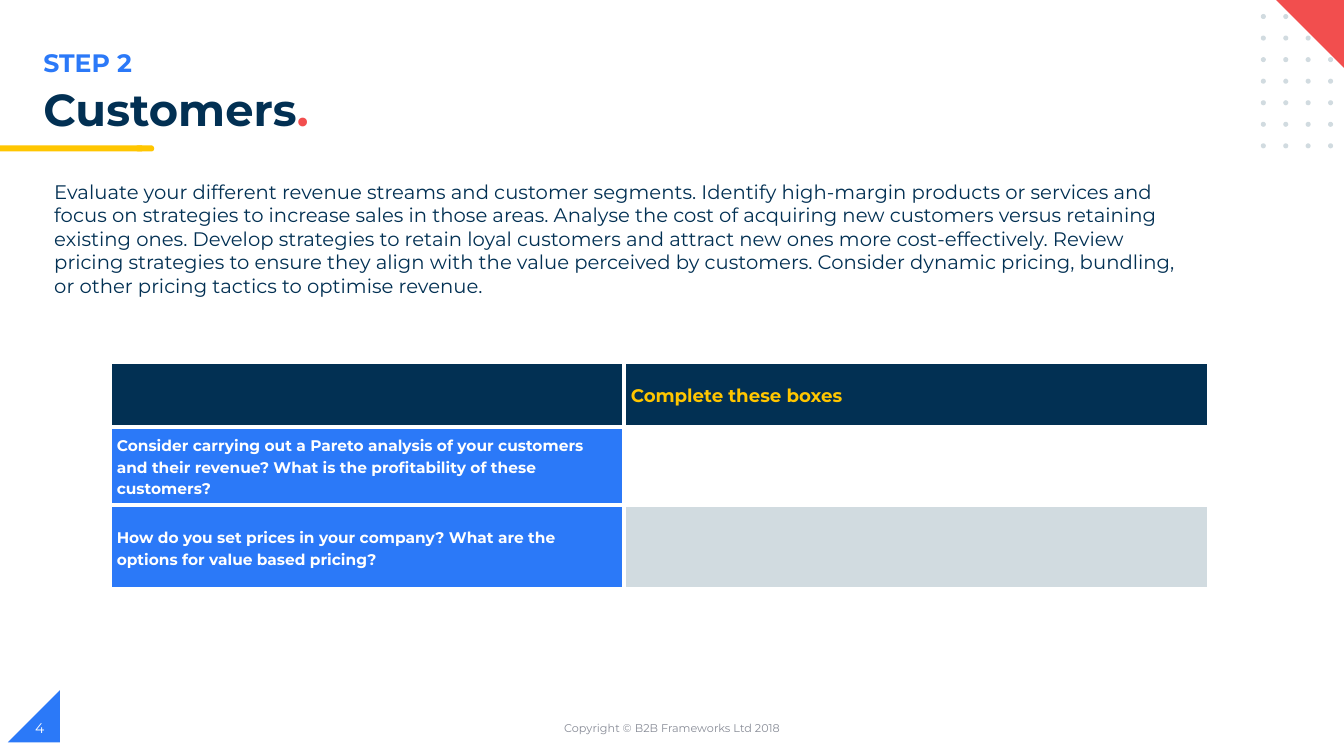
import pptx
import pptx.dml.color
import pptx.enum.shapes
import pptx.enum.text
import pptx.oxml.ns
import pptx.util
from lxml import etree

Pt = pptx.util.Pt
SHAPE = pptx.enum.shapes.MSO_SHAPE
ALIGN = pptx.enum.text.PP_ALIGN
ANCHOR = pptx.enum.text.MSO_ANCHOR
FONT = "Montserrat"
COLOURS = {
    "navy": "023053",
    "blue": "2B79F8",
    "yellow": "FFC600",
    "red": "F24E4E",
    "pale": "D1DBE0",
    "grey": "888C97",
    "white": "FFFFFF",
}


def add_block(kind, left, top, width, height, colour, rotation=0):
    shape = slide.shapes.add_shape(kind, Pt(left), Pt(top), Pt(width), Pt(height))
    shape.shadow.inherit = False
    shape.fill.solid()
    shape.fill.fore_color.rgb = pptx.dml.color.RGBColor.from_string(COLOURS[colour])
    shape.line.fill.background()
    shape.rotation = rotation


def add_run(paragraph, text, size, colour, bold=False):
    run = paragraph.add_run()
    run.text = text
    run.font.name = FONT
    run.font.size = Pt(size)
    run.font.bold = bold
    run.font.color.rgb = pptx.dml.color.RGBColor.from_string(COLOURS[colour])


presentation = pptx.Presentation()
presentation.slide_width = Pt(960)
presentation.slide_height = Pt(540)
slide = presentation.slides.add_slide(presentation.slide_layouts[6])

# Page number corner and yellow bar under the title
add_block(SHAPE.RIGHT_TRIANGLE, 5.6, 493, 37.2, 37.2, "blue", 270)
add_block(SHAPE.FLOWCHART_TERMINATOR, 96.5, 103.8, 13.7, 4.4, "yellow")
add_block(SHAPE.RECTANGLE, 0, 103.8, 101.5, 4.4, "yellow")

# Dot grid with the red corner over it
for row in range(7):
    for column in range(4):
        add_block(SHAPE.OVAL, 900.6 + 16 * column, 10 + 15.4 * row, 3.6, 3.6, "pale")
add_block(SHAPE.RIGHT_TRIANGLE, 910.9, -0.7, 51.8, 51.8, "red", 180)

# Texts: place, anchor, alignment, line spacing, runs
body = (
    "Evaluate your different revenue streams and customer segments. "
    "Identify high-margin products or services and focus on strategies to "
    "increase sales in those areas. Analyse the cost of acquiring new customers "
    "versus retaining existing ones. Develop strategies to retain loyal customers "
    "and attract new ones more cost-effectively. Review pricing strategies to "
    "ensure they align with the value perceived by customers. Consider dynamic "
    "pricing, bundling, or other pricing tactics to optimise revenue."
)
texts = [
    ((23.8, 30.2, 481.7, 29), ANCHOR.TOP, ALIGN.LEFT, 1,
     [("STEP 2", 18, "blue", True)]),
    ((23.8, 59, 802.8, 40.3), ANCHOR.TOP, ALIGN.LEFT, 0.9,
     [("Customers", 32, "navy", True), (".", 32, "red", True)]),
    ((31.7, 124.6, 832.3, 92.2), ANCHOR.TOP, ALIGN.LEFT, 1,
     [(body, 14, "navy")]),
    ((318.2, 505.4, 324, 28.8), ANCHOR.MIDDLE, ALIGN.CENTER, 1,
     [("Copyright © B2B Frameworks Ltd 2018", 8, "grey")]),
    ((18, 505.4, 216, 28.8), ANCHOR.MIDDLE, ALIGN.LEFT, 1,
     [("4", 10, "white")]),
]
for place, anchor, alignment, spacing, runs in texts:
    frame = slide.shapes.add_textbox(*[Pt(length) for length in place]).text_frame
    frame.word_wrap = True
    frame.vertical_anchor = anchor
    paragraph = frame.paragraphs[0]
    paragraph.alignment = alignment
    paragraph.line_spacing = spacing
    for run in runs:
        add_run(paragraph, *run)

# Question table: text, size, text colour, fill
pareto = (
    "Consider carrying out a Pareto analysis of your customers and their revenue? "
    "What is the profitability of these customers?"
)
pricing = (
    "How do you set prices in your company? "
    "What are the options for value based pricing?"
)
rows = [
    [("", 13, "yellow", "navy"), ("Complete these boxes", 13, "yellow", "navy")],
    [(pareto, 11, "white", "blue"), ("", 11, "navy", "white")],
    [(pricing, 11, "white", "blue"), ("", 11, "navy", "pale")],
]
widths = [367.2, 417.6]
heights = [46.4, 56, 60]
table = slide.shapes.add_table(
    3, 2, Pt(78.4), Pt(258.6), Pt(sum(widths)), Pt(sum(heights))
).table
for column, width in zip(table.columns, widths):
    column.width = Pt(width)
for row, height in zip(table.rows, heights):
    row.height = Pt(height)

qn = pptx.oxml.ns.qn
for row_number, row in enumerate(rows):
    for column_number, (text, size, colour, fill) in enumerate(row):
        cell = table.cell(row_number, column_number)
        cell.margin_left = cell.margin_right = Pt(5)
        cell.margin_top = cell.margin_bottom = 0
        cell.vertical_anchor = ANCHOR.MIDDLE
        # White borders on all four sides
        properties = cell._tc.get_or_add_tcPr()
        for side in ("a:lnL", "a:lnR", "a:lnT", "a:lnB"):
            line = etree.SubElement(properties, qn(side), w=str(int(Pt(3))))
            solid = etree.SubElement(line, qn("a:solidFill"))
            etree.SubElement(solid, qn("a:srgbClr"), val=COLOURS["white"])
        cell.fill.solid()
        cell.fill.fore_color.rgb = pptx.dml.color.RGBColor.from_string(COLOURS[fill])
        paragraph = cell.text_frame.paragraphs[0]
        paragraph.line_spacing = 1.15
        if text:
            add_run(paragraph, text, size, colour, True)

presentation.save("out.pptx")
